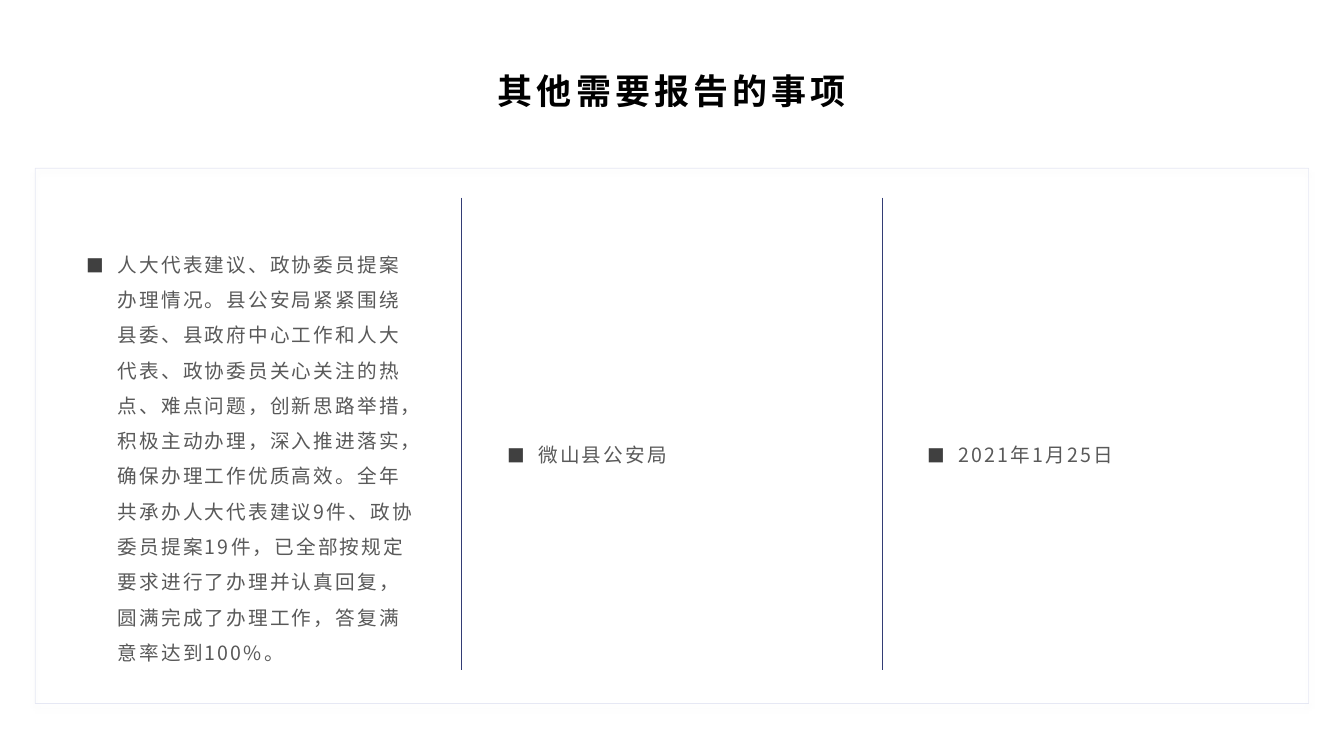
from lxml import etree
from pptx import Presentation
from pptx import util as u
from pptx.dml.color import RGBColor
from pptx.enum import shapes, text
from pptx.oxml import ns

FONT = "Noto Sans CJK SC"
COLUMNS = [
    (0.76, 2.33, "人大代表建议、政协委员提案办理情况。县公安局紧紧围绕县委、县政府中心工作和人大代表、"
                 "政协委员关心关注的热点、难点问题，创新思路举措，积极主动办理，深入推进落实，"
                 "确保办理工作优质高效。全年共承办人大代表建议9件、政协委员提案19件，"
                 "已全部按规定要求进行了办理并认真回复，圆满完成了办理工作，答复满意率达到100%。"),
    (4.93, 2.29, "微山县公安局"),
    (9.1, 2.29, "2021年1月25日"),
]


def color(value):
    return RGBColor.from_string(value)


def add_xml(parent, tag, **attributes):
    return etree.SubElement(parent, ns.qn(tag), attributes)


def write(box, content, size, ink, bold=False, spacing=0, align=text.PP_ALIGN.LEFT,
          anchor=text.MSO_ANCHOR.MIDDLE, inset=0.05):
    """Fill a box with one formatted paragraph and return the paragraph."""
    frame = box.text_frame
    frame.word_wrap = True
    frame.auto_size = text.MSO_AUTO_SIZE.NONE
    frame.vertical_anchor = anchor
    frame.margin_top = frame.margin_bottom = u.Inches(inset)
    para = frame.paragraphs[0]
    para.alignment = align
    para.space_before = u.Pt(0)
    span = para.add_run()
    span.text = content
    span.font.size = u.Pt(size)
    span.font.bold = bold
    span.font.color.rgb = color(ink)
    span.font.name = FONT
    properties = span.font._element
    properties.set("spc", str(int(spacing * 100)))
    add_xml(properties, "a:ea", typeface=FONT)
    return para


class Slide:
    ink = "595959"
    bullet_ink = "404040"
    divider_ink = "333D75"
    frame_ink = "8590CA"

    def __init__(self, deck):
        self.page = deck.slides.add_slide(deck.slide_layouts[4])
        self.title_box, *self.bodies = self.page.placeholders

    def place(self, box, left, top, width, height):
        box.left, box.top = u.Inches(left), u.Inches(top)
        box.width, box.height = u.Inches(width), u.Inches(height)

    def title(self, content):
        self.place(self.title_box, 0.35, 0.57, 12.63, 0.58)
        write(self.title_box, content, 25, "000000", bold=True, spacing=3,
              align=text.PP_ALIGN.CENTER, anchor=text.MSO_ANCHOR.BOTTOM, inset=0.04)

    def bullet_column(self, left, top, content):
        box = self.bodies.pop(0)
        self.place(box, left, top, 3.46, 4.32)
        para = write(box, content, 14, self.ink, spacing=1.5)
        para.line_spacing = 1.5
        para.space_after = u.Pt(10)
        properties = para._p.get_or_add_pPr()
        properties.set("marL", str(u.Inches(0.31)))
        properties.set("indent", str(-u.Inches(0.31)))
        add_xml(add_xml(properties, "a:buClr"), "a:srgbClr", val=self.bullet_ink)
        add_xml(properties, "a:buSzPct", val="90000")
        add_xml(properties, "a:buFont", typeface=FONT)
        add_xml(properties, "a:buChar", char="■")

    def frame(self, left, top, width, height):
        box = self.page.shapes.add_shape(
            shapes.MSO_SHAPE.RECTANGLE, *map(u.Inches, (left, top, width, height)))
        box.fill.background()
        box.line.color.rgb = color(self.frame_ink)
        box.line.width = u.Pt(0.5)
        box.shadow.inherit = False
        properties = box._element.spPr
        add_xml(properties.find(".//" + ns.qn("a:srgbClr")), "a:alpha", val="20000")
        shadow = add_xml(properties.find(ns.qn("a:effectLst")), "a:outerShdw",
                         blurRad=str(u.Pt(4)), dist=str(u.Pt(3)), dir="5400000")
        add_xml(add_xml(shadow, "a:srgbClr", val="000000"), "a:alpha", val="40000")

    def divider(self, x):
        line = self.page.shapes.add_connector(
            shapes.MSO_CONNECTOR.STRAIGHT, *map(u.Inches, (x, 1.96, x, 6.65)))
        line.line.color.rgb = color(self.divider_ink)
        line.line.width = u.Pt(0.5)
        add_xml(line._element.spPr, "a:effectLst")

    def remove_unused(self):
        for box in self.bodies:
            box._element.getparent().remove(box._element)


def main():
    deck = Presentation()
    deck.slide_width, deck.slide_height = u.Inches(13.33), u.Inches(7.5)
    slide = Slide(deck)

    # Title and framed area
    slide.title("其他需要报告的事项")
    slide.frame(0.35, 1.67, 12.63, 5.31)

    # Three columns with dividers between them
    for column in COLUMNS:
        slide.bullet_column(*column)
    for x in (4.58, 8.75):
        slide.divider(x)

    slide.remove_unused()
    deck.save("out.pptx")


if __name__ == "__main__":
    main()
